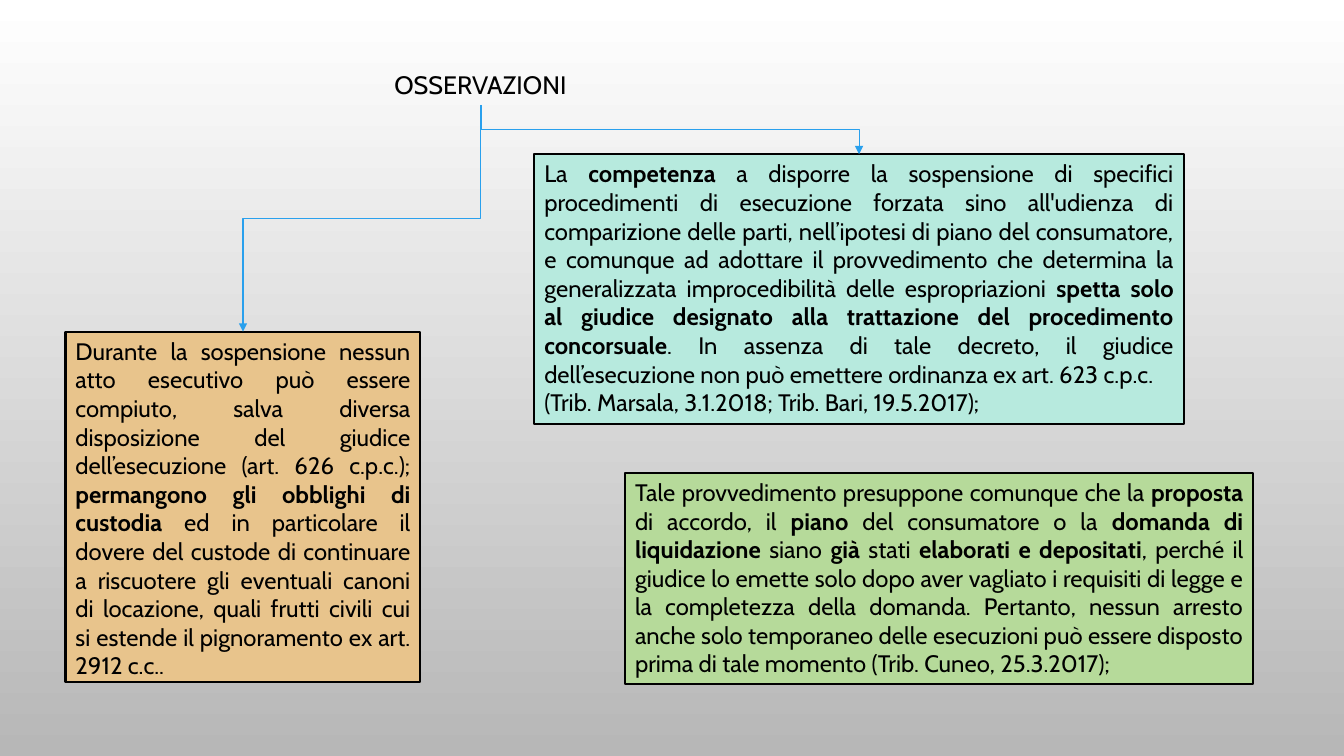
from lxml.etree import SubElement
from pptx import Presentation
from pptx.dml.color import RGBColor
from pptx.enum.shapes import MSO_CONNECTOR, MSO_SHAPE
from pptx.enum.text import MSO_ANCHOR, MSO_AUTO_SIZE, PP_ALIGN
from pptx.oxml.ns import qn
from pptx.util import Inches, Pt

BLACK = "000000"
ARROW_BLUE = "29A0ED"
BLANK_LAYOUT = 6
FRAME_FORMAT = {
    "word_wrap": True,
    "auto_size": MSO_AUTO_SIZE.SHAPE_TO_FIT_TEXT,
    "vertical_anchor": MSO_ANCHOR.TOP,
}

COMPETENCE = [
    "La **competenza** a disporre la sospensione di specifici procedimenti di "
    "esecuzione forzata sino all'udienza di comparizione delle parti, nell’ipotesi "
    "di piano del consumatore, e comunque ad adottare il provvedimento che determina "
    "la generalizzata improcedibilità delle espropriazioni **spetta solo al giudice "
    "designato alla trattazione del procedimento concorsuale**. In assenza di tale "
    "decreto, il giudice dell’esecuzione non può emettere ordinanza ex art. 623 c.p.c. ",
    "(Trib. Marsala, 3.1.2018; Trib. Bari, 19.5.2017); ",
]
CONDITIONS = [
    "Tale provvedimento presuppone comunque che la **proposta** di accordo, il "
    "**piano** del consumatore o la **domanda di liquidazione **siano **già** stati "
    "**elaborati e depositati**, perché il giudice lo emette solo dopo aver vagliato "
    "i requisiti di legge e la completezza della domanda. Pertanto, nessun arresto "
    "anche solo temporaneo delle esecuzioni può essere disposto prima di tale momento "
    "(Trib. Cuneo, 25.3.2017);",
]
CUSTODY = [
    "Durante la sospensione nessun atto esecutivo può essere compiuto, salva diversa "
    "disposizione del giudice dell’esecuzione (art. 626 c.p.c.); **permangono gli "
    "obblighi di custodia **ed in particolare il dovere del custode di continuare a "
    "riscuotere gli eventuali canoni di locazione, quali frutti civili cui si estende "
    "il pignoramento ex art. 2912 c.c..",
]


def color(value):
    """Turn a hex string into a colour."""
    return RGBColor.from_string(value)


def apply_format(target, values):
    """Set each named attribute on the target."""
    for name, value in values.items():
        setattr(target, name, value)


def paint_background(page, top, bottom):
    """Fill the page with a vertical gradient."""
    fill = page.background.fill
    fill.gradient()
    fill.gradient_angle = 270
    for stop, value in zip(fill.gradient_stops, (top, bottom)):
        stop.color.rgb = color(value)


def write_text(box, texts, size, alignment):
    """Write paragraphs in which double asterisks switch bold on and off."""
    frame = box.text_frame
    apply_format(frame, FRAME_FORMAT)
    for index, text in enumerate(texts):
        para = frame.add_paragraph() if index else frame.paragraphs[0]
        para.alignment = alignment
        for position, part in enumerate(text.split("**")):
            span = para.add_run()
            span.text = part
            apply_format(span.font, {"name": "Cabin", "size": Pt(size), "bold": position % 2 == 1})
            span.font.color.rgb = color(BLACK)


def add_title(page, text, left, top, width, height):
    """Add the centred title."""
    box = page.shapes.add_textbox(*map(Inches, (left, top, width, height)))
    write_text(box, [text], 18, PP_ALIGN.CENTER)


def add_note(page, texts, fill, left, top, width, height):
    """Add an outlined box of justified text."""
    box = page.shapes.add_shape(MSO_SHAPE.RECTANGLE, *map(Inches, (left, top, width, height)))
    box.shadow.inherit = False
    box.fill.solid()
    box.fill.fore_color.rgb = color(fill)
    box.line.color.rgb = color(BLACK)
    box.line.width = Pt(1.5)
    write_text(box, texts, 17, PP_ALIGN.JUSTIFY)


def add_elbow_arrow(page, start, end):
    """Add an arrow that goes down, across and down again."""
    (start_x, start_y), (end_x, end_y) = start, end
    drop, span = end_y - start_y, abs(end_x - start_x)
    left = (start_x + end_x - drop) / 2
    top = (start_y + end_y - span) / 2
    arrow = page.shapes.add_connector(
        MSO_CONNECTOR.ELBOW, *map(Inches, (left, top, left + drop, top + span)))
    arrow.line.color.rgb = color(ARROW_BLUE)
    arrow.line.width = Pt(0.75)
    properties = arrow._element.spPr
    goes_right = end_x > start_x
    properties.xfrm.set("rot", str((270 if goes_right else 90) * 60000))
    if goes_right:
        properties.xfrm.set("flipH", "1")
    SubElement(properties.find(qn("a:ln")), qn("a:tailEnd"), type="triangle")
    SubElement(properties, qn("a:effectLst"))


def main():
    """Build and save the slide."""
    deck = Presentation()
    apply_format(deck, {"slide_width": Inches(13.33), "slide_height": Inches(7.5)})
    page = deck.slides.add_slide(deck.slide_layouts[BLANK_LAYOUT])
    paint_background(page, "FFFFFF", "B7B7B7")
    add_title(page, "OSSERVAZIONI", 0, 0.64, 9.53, 0.4)
    add_note(page, COMPETENCE, "B7EADE", 5.3, 1.53, 6.44, 2.68)
    add_note(page, CONDITIONS, "B6DA9A", 6.2, 4.69, 6.23, 2.1)
    add_note(page, CUSTODY, "E8C48C", 0.65, 3.29, 3.52, 3.48)
    for target in ((8.52, 1.53), (2.41, 3.29)):
        add_elbow_arrow(page, (4.77, 1.04), target)
    deck.save("out.pptx")


if __name__ == "__main__":
    main()
